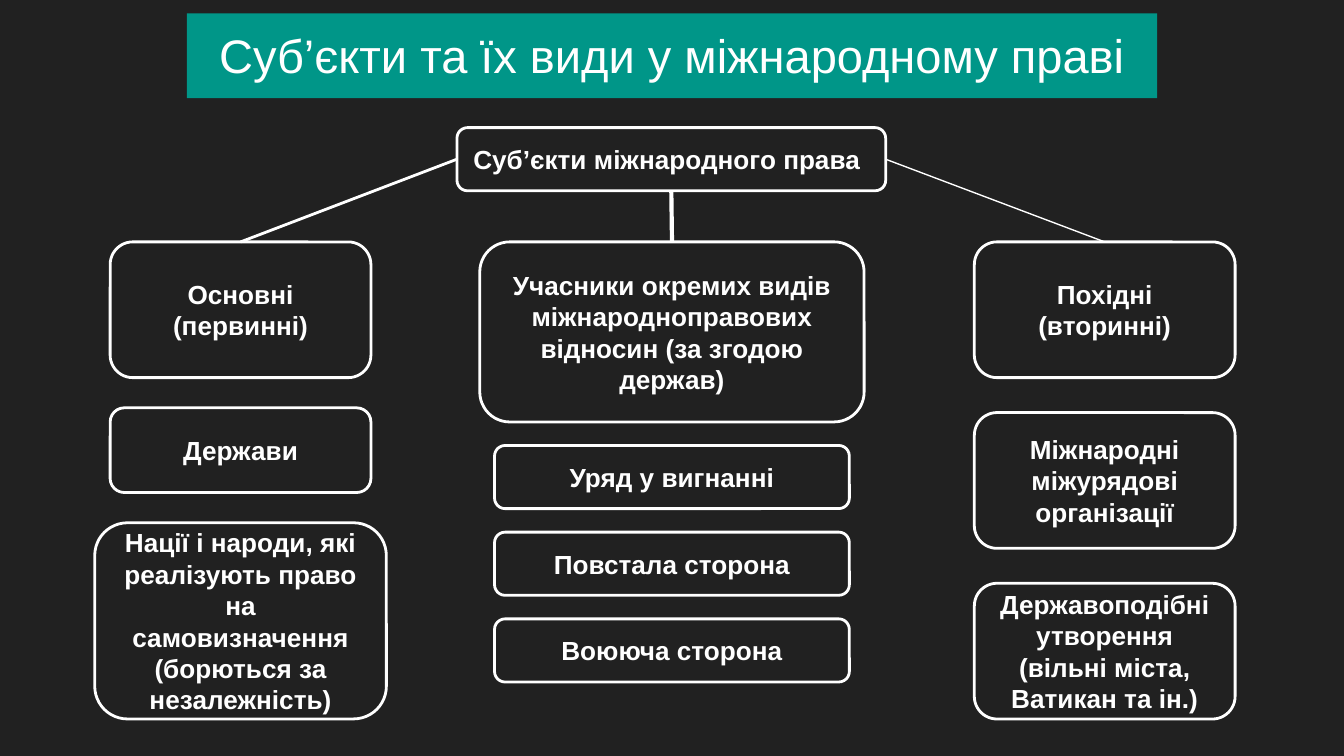
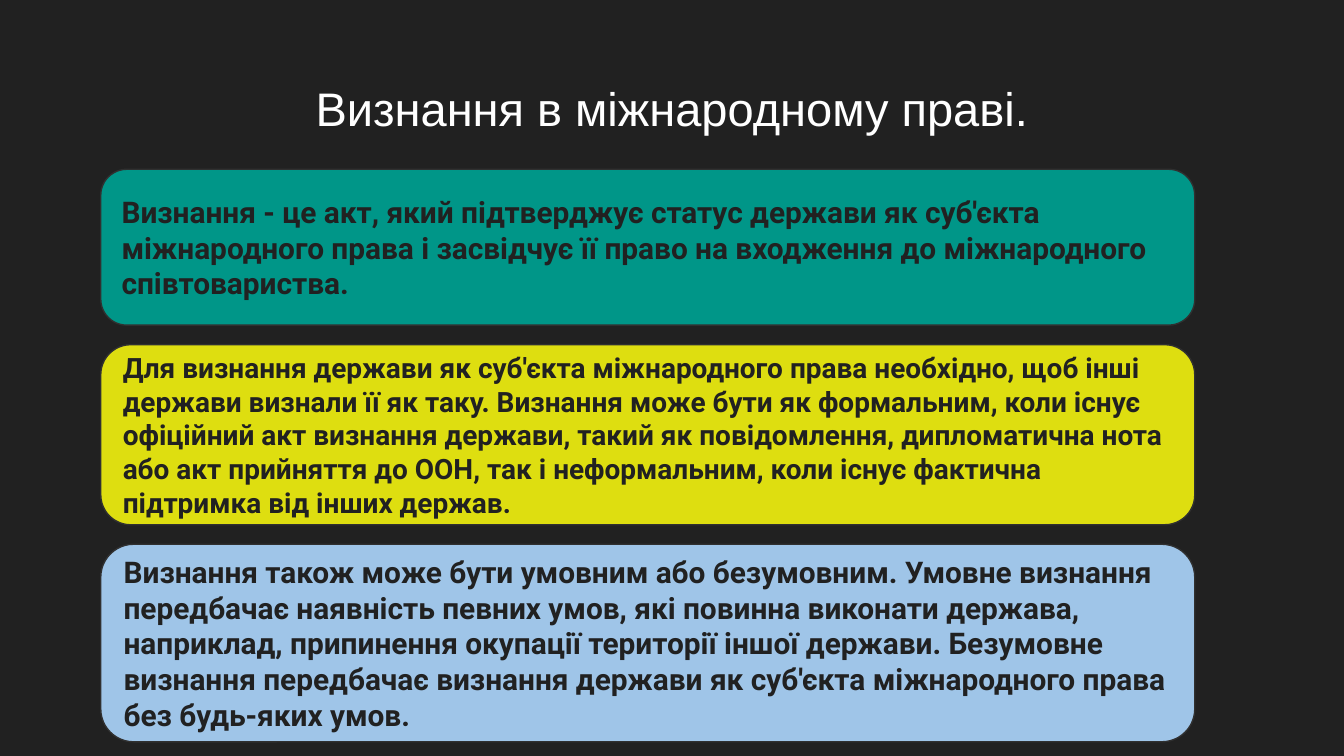
from dataclasses import dataclass

from pptx import Presentation
from pptx import util as u
from pptx.dml import color
from pptx.enum import shapes, text
from pptx.oxml import xmlchemy

SLIDE_WIDTH, SLIDE_HEIGHT = u.Inches(10), u.Inches(5.625)
COLUMNS, ROWS = 100, 56.25
TITLE_ONLY = 5

DARK, WHITE, TEAL = "212121", "FFFFFF", "009688"
YELLOW, BLUE, EDGE = "DEDE10", "9FC5E8", "303030"
INSET = u.Inches(0.1)
LEFT, CENTRE = text.PP_ALIGN.LEFT, text.PP_ALIGN.CENTER

TITLE_FONT = {"name": "Arial", "size": u.Pt(25.2), "bold": False}
BOX_FONT = {"name": "Arial", "size": u.Pt(14), "bold": True}
FRAME = {
    "margin_left": INSET, "margin_top": INSET,
    "margin_right": INSET, "margin_bottom": INSET,
    "word_wrap": True, "auto_size": text.MSO_AUTO_SIZE.NONE,
}


@dataclass
class Area:
    left: float
    top: float
    width: float
    height: float

    def place(self) -> dict:
        return {
            "left": col(self.left), "top": row(self.top),
            "width": col(self.width), "height": row(self.height),
        }


@dataclass
class Box:
    width: float
    height: float
    words: str


@dataclass
class Branch:
    centre: float
    gap: float
    boxes: list[Box]
    root_site: int
    weight: float


@dataclass
class Panel:
    height: float
    fill: str
    size: float
    words: str


ROOT = Box(31.9, 4.7, "Суб’єкти міжнародного права")
BRANCHES = [
    Branch(50, 1.75, [
        Box(28.6, 13.4, "Учасники окремих видів міжнародноправових відносин (за згодою держав)"),
        Box(26.4, 4.7, "Уряд у вигнанні"),
        Box(26.4, 4.7, "Повстала сторона"),
        Box(26.4, 4.7, "Воююча сторона"),
    ], 2, 2.25),
    Branch(17.9, 2.25, [
        Box(19.4, 10.1, "Основні (первинні)"),
        Box(19.4, 6.3, "Держави"),
        Box(21.7, 14.6, "Нації і народи, які реалізують право на самовизначення (борються за незалежність)"),
    ], 1, 1.5),
    Branch(82.2, 2.6, [
        Box(19.4, 10.1, "Похідні (вторинні)"),
        Box(19.4, 10.1, "Міжнародні міжурядові організації"),
        Box(19.4, 10.1, "Державоподібні утворення (вільні міста, Ватикан та ін.)"),
    ], 3, 0.75),
]
PANELS = [
    Panel(11.6, TEAL, 16,
          "Визнання - це акт, який підтверджує статус держави як суб'єкта "
          "міжнародного права і засвідчує її право на входження до міжнародного "
          "співтовариства."),
    Panel(13.4, YELLOW, 15,
          "Для визнання держави як суб'єкта міжнародного права необхідно, щоб інші "
          "держави визнали її як таку. Визнання може бути як формальним, коли існує "
          "офіційний акт визнання держави, такий як повідомлення, дипломатична нота "
          "або акт прийняття до ООН, так і неформальним, коли існує фактична "
          "підтримка від інших держав."),
    Panel(14.7, BLUE, 16,
          "Визнання також може бути умовним або безумовним. Умовне визнання "
          "передбачає наявність певних умов, які повинна виконати держава, "
          "наприклад, припинення окупації території іншої держави. Безумовне "
          "визнання передбачає визнання держави як суб'єкта міжнародного права "
          "без будь-яких умов."),
]


def col(count: float) -> int:
    return round(SLIDE_WIDTH * count / COLUMNS)


def row(count: float) -> int:
    return round(SLIDE_HEIGHT * count / ROWS)


def set_all(target, values: dict) -> None:
    for key, value in values.items():
        setattr(target, key, value)


def paint(target, hex_colour: str) -> None:
    if hasattr(target, "solid"):
        target.solid()
        target = target.fore_color
    target.rgb = color.RGBColor.from_string(hex_colour)


def write(shape, words: str, font: dict, hex_colour: str, align, anchor) -> None:
    frame = shape.text_frame
    set_all(frame, FRAME | {"vertical_anchor": anchor})
    frame.text = words
    paragraph = frame.paragraphs[0]
    paragraph.alignment = align
    set_all(paragraph.runs[0].font, font)
    paint(paragraph.runs[0].font.color, hex_colour)


def add_titled_slide(deck, heading: str, area: Area):
    slide = deck.slides.add_slide(deck.slide_layouts[TITLE_ONLY])
    title = slide.shapes.title
    set_all(title, area.place())
    write(title, heading, TITLE_FONT, WHITE, CENTRE, text.MSO_ANCHOR.TOP)
    return slide


def add_rounded(slide, area: Area, words: str, font: dict, ink: str, edge: str,
                weight: float, align=CENTRE, fill: str | None = None):
    rounded = slide.shapes.add_shape(
        shapes.MSO_SHAPE.ROUNDED_RECTANGLE, **area.place())
    rounded.shadow.inherit = False
    if fill:
        paint(rounded.fill, fill)
    else:
        rounded.fill.background()
    paint(rounded.line.fill, edge)
    rounded.line.width = u.Pt(weight)
    write(rounded, words, font, ink, align, text.MSO_ANCHOR.MIDDLE)
    return rounded


def add_box(slide, box: Box, centre: float, top: float, align=CENTRE):
    area = Area(centre - box.width / 2, top, box.width, box.height)
    return add_rounded(slide, area, box.words, BOX_FONT, WHITE, WHITE, 1.5, align)


def join(slide, root, site: int, head, weight: float) -> None:
    link = slide.shapes.add_connector(shapes.MSO_CONNECTOR.STRAIGHT, 0, 0, 0, 0)
    link.begin_connect(root, site)
    link.end_connect(head, 0)
    paint(link.line.fill, WHITE)
    link.line.width = u.Pt(weight)
    properties = link._element.spPr
    properties.append(xmlchemy.OxmlElement("a:effectLst"))


def build_subjects(deck) -> None:
    slide = add_titled_slide(
        deck, "Суб’єкти та їх види у міжнародному праві", Area(13.9, 1, 72.2, 6.3))
    paint(slide.shapes.title.fill, TEAL)
    root = add_box(slide, ROOT, 49.95, 9.5, LEFT)
    heads = []
    for branch in BRANCHES:
        top = 18
        drawn = []
        for box in branch.boxes:
            drawn.append(add_box(slide, box, branch.centre, top))
            top += box.height + branch.gap
        heads.append(drawn[0])
    for branch, head in zip(BRANCHES, heads):
        join(slide, root, branch.root_site, head, branch.weight)


def build_recognition(deck) -> None:
    slide = add_titled_slide(
        deck, "Визнання в міжнародному праві.", Area(3.4, 4.9, 93.2, 6.3))
    top = 12.6
    for panel in PANELS:
        font = {"name": "Roboto", "size": u.Pt(panel.size), "bold": True}
        add_rounded(slide, Area(7.5, top, 81.4, panel.height), panel.words,
                    font, DARK, EDGE, 0.75, LEFT, panel.fill)
        top += panel.height + 1.45


def main() -> None:
    deck = Presentation()
    set_all(deck, {"slide_width": SLIDE_WIDTH, "slide_height": SLIDE_HEIGHT})
    paint(deck.slide_master.background.fill, DARK)
    build_subjects(deck)
    build_recognition(deck)
    deck.save("out.pptx")


if __name__ == "__main__":
    main()
